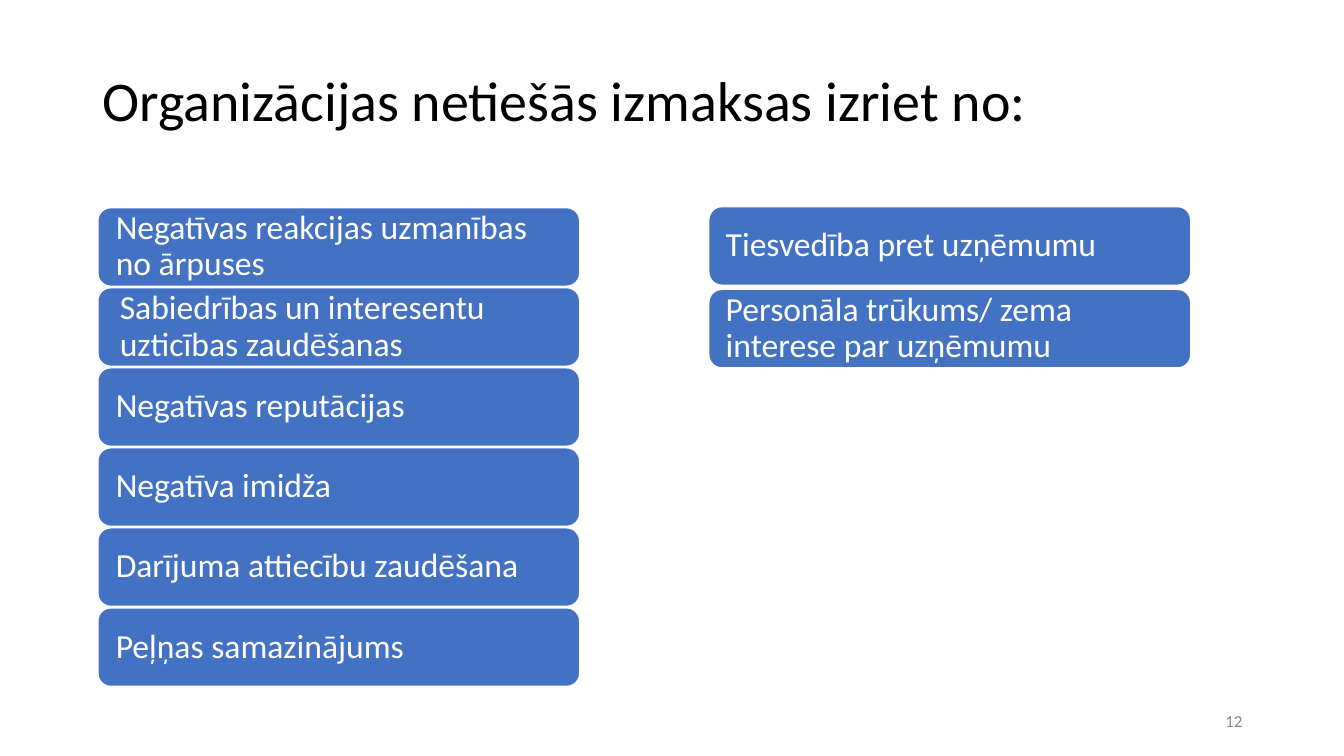
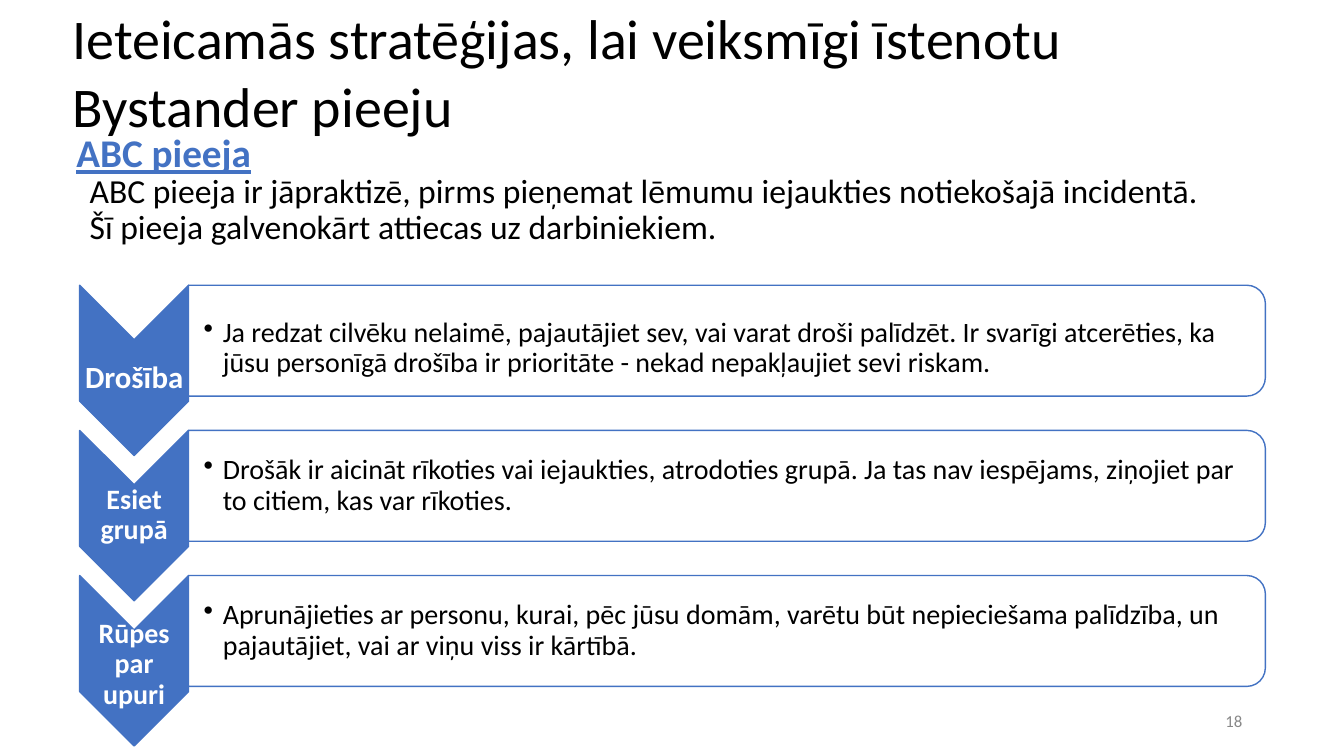
from dataclasses import dataclass

from lxml.etree import SubElement
from pptx import Presentation
from pptx.dml.color import RGBColor
from pptx.enum.shapes import MSO_SHAPE
from pptx.enum.text import MSO_ANCHOR, PP_ALIGN
from pptx.oxml.ns import qn
from pptx.util import Inches, Pt


@dataclass(frozen=True)
class Theme:
    font: str = "Calibri"
    blue: str = "4372C3"
    white: str = "FFFFFF"
    black: str = "000000"
    gray: str = "888888"
    title: int = 40
    head: int = 28
    body: int = 24
    item: int = 20
    foot: int = 12


T = Theme()
INSET = (0.1, 0.05, 0.1, 0.05)


def write(shape, text, size, color=T.black, inset=INSET, anchor=MSO_ANCHOR.MIDDLE,
          align=PP_ALIGN.LEFT, space=0.9, bold=False, line=False):
    """Fill a shape with one styled paragraph."""
    frame = shape.text_frame
    frame.word_wrap = True
    frame.vertical_anchor = anchor
    (frame.margin_left, frame.margin_top,
     frame.margin_right, frame.margin_bottom) = map(Inches, inset)
    para = frame.paragraphs[0]
    para.text = text
    para.alignment = align
    para.line_spacing = space
    font = para.font
    font.name, font.size = T.font, Pt(size)
    font.bold, font.underline = bold, line
    font.color.rgb = RGBColor.from_string(color)
    return para


def label(slide, box, text, size, **style):
    """Add a text box; box is left, top, width, height."""
    shape = slide.shapes.add_textbox(*map(Inches, box))
    return write(shape, text, size, **style)


def block(slide, kind, box, fill, edge, turn=0):
    """Add a filled shape; a quarter turn keeps the box it is seen in."""
    x, y, w, h = box
    if turn:
        x, y, w, h = x + (w - h) / 2, y + (h - w) / 2, h, w
    shape = slide.shapes.add_shape(kind, *map(Inches, (x, y, w, h)))
    shape.rotation = turn
    shape.shadow.inherit = False
    shape.fill.solid()
    shape.fill.fore_color.rgb = RGBColor.from_string(fill)
    shape.line.color.rgb = RGBColor.from_string(edge)
    shape.line.width = Pt(1)
    return shape


def bullet(para):
    """Give a paragraph a hanging round bullet."""
    props = para._p.get_or_add_pPr()
    props.set("marL", str(Inches(0.19)))
    props.set("indent", str(Inches(-0.19)))
    tint = SubElement(SubElement(props, qn("a:buClr")), qn("a:srgbClr"))
    tint.set("val", T.black)
    SubElement(props, qn("a:buChar")).set("char", "•")


def page(deck, number, title, box, **style):
    """Start a slide with its title and page number."""
    slide = deck.slides.add_slide(deck.slide_layouts[6])
    label(slide, box, title, T.title, **style)
    label(slide, (9.42, 6.95, 3, 0.4), str(number), T.foot,
          color=T.gray, align=PP_ALIGN.RIGHT, space=1)
    return slide


def stack(slide, box, pitch, items):
    """Stack rounded bars downward from the first bar's box."""
    x, y, w, h = box
    for row, (text, left) in enumerate(items):
        bar = block(slide, MSO_SHAPE.ROUNDED_RECTANGLE,
                    (x, y + row * pitch, w, h), T.blue, T.white)
        write(bar, text, T.body, color=T.white, inset=(left, 0, 0.13, 0))


def step(slide, box, name, size, text, drop, sink):
    """Draw a down chevron with its panel; drop and sink lower the texts."""
    x, y, w, h = box
    arm, tall = 1.08, 1.1
    block(slide, MSO_SHAPE.CHEVRON, (x, y, arm, h), T.blue, T.blue, 90)
    label(slide, (x, y + drop, arm, h), name, size, color=T.white,
          inset=(0.02,) * 4, align=PP_ALIGN.CENTER, bold=True)
    panel = (x + arm, y, w - arm, tall)
    shape = block(slide, MSO_SHAPE.ROUND_2_SAME_RECTANGLE, panel,
                  T.white, T.blue, 90)
    shape.adjustments[0] = 0.167
    para = label(slide, (x + arm, y + sink, w - arm - 0.05, tall), text, T.item,
                 inset=(0.15, 0.01, 0.01, 0.01))
    bullet(para)


def costs(deck):
    slide = page(deck, 12, "Organizācijas netiešās izmaksas izriet no:",
                 (0.92, 0.3, 11.5, 1.45))
    # Left and right columns: text and its left inset
    stack(slide, (0.97, 2.06, 4.78, 0.78), 3.97 / 5, (
        ("Negatīvas reakcijas uzmanības no ārpuses", 0.14),
        ("Sabiedrības un interesentu uzticības zaudēšanas", 0.18),
        ("Negatīvas reputācijas", 0.14),
        ("Negatīva imidža", 0.14),
        ("Darījuma attiecību zaudēšana", 0.14),
        ("Peļņas samazinājums", 0.14),
    ))
    stack(slide, (7.03, 2.05, 4.78, 0.78), 0.82, (
        ("Tiesvedība pret uzņēmumu", 0.13),
        ("Personāla trūkums/ zema interese par uzņēmumu", 0.13),
    ))


def tactics(deck):
    slide = page(deck, 18,
                 "Ieteicamās stratēģijas, lai veiksmīgi īstenotu Bystander pieeju",
                 (0.62, -0.01, 10.98, 1.45), anchor=MSO_ANCHOR.TOP, space=1)
    # Heading and introduction
    label(slide, (0.66, 1.29, 11.5, 0.5), "ABC pieeja", T.head,
          color=T.blue, bold=True, line=True)
    label(slide, (0.79, 1.68, 11.25, 0.85),
          "ABC pieeja ir jāpraktizē, pirms pieņemat lēmumu iejaukties "
          "notiekošajā incidentā. Šī pieeja galvenokārt attiecas uz darbiniekiem.",
          T.body, anchor=MSO_ANCHOR.TOP)
    # Three steps: name, size, text, and how far the texts are lowered
    steps = (
        ("Drošība", 22,
         "Ja redzat cilvēku nelaimē, pajautājiet sev, vai varat droši palīdzēt. "
         "Ir svarīgi atcerēties, ka jūsu personīgā drošība ir prioritāte - "
         "nekad nepakļaujiet sevi riskam.", 0.08, 0.08),
        ("Esiet grupā", T.item,
         "Drošāk ir aicināt rīkoties vai iejaukties, atrodoties grupā. "
         "Ja tas nav iespējams, ziņojiet par to citiem, kas var rīkoties.", 0, 0),
        ("Rūpes par upuri", T.item,
         "Aprunājieties ar personu, kurai, pēc jūsu domām, varētu būt "
         "nepieciešama palīdzība, un pajautājiet, vai ar viņu viss ir kārtībā.",
         0.04, 0),
    )
    for row, parts in enumerate(steps):
        step(slide, (0.79, 2.83 + row * 1.44, 11.76, 1.69), *parts)


def main():
    deck = Presentation()
    deck.slide_width, deck.slide_height = Inches(13.33), Inches(7.5)
    costs(deck)
    tactics(deck)
    deck.save("out.pptx")


if __name__ == "__main__":
    main()
